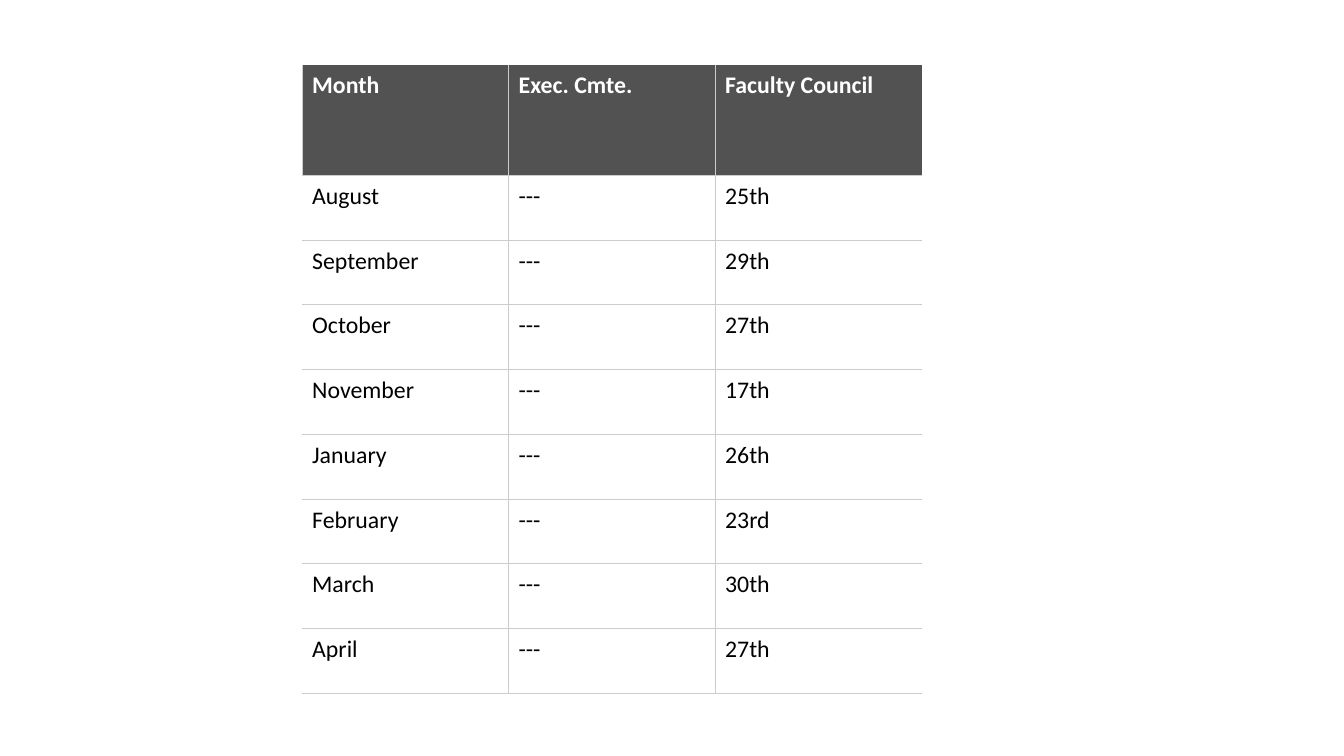
from lxml import etree
from pptx import Presentation
from pptx.dml.color import RGBColor
from pptx.oxml.ns import qn
from pptx.util import Pt

COLORS = {"header": "525252", "grid": "CCCCCC", "header_text": "FFFFFF", "text": "000000"}
FONT = "Calibri"
BLANK_LAYOUT = 6

HEADINGS = ("Month", "Exec. Cmte.", "Faculty Council")
COUNCIL_DATES = (
    ("August", "25th"),
    ("September", "29th"),
    ("October", "27th"),
    ("November", "17th"),
    ("January", "26th"),
    ("February", "23rd"),
    ("March", "30th"),
    ("April", "27th"),
)
NO_MEETING = "---"

TABLE_LEFT, TABLE_TOP = Pt(216), Pt(46.4)
COLUMN_WIDTH = Pt(147.5)
HEADER_HEIGHT, MONTH_HEIGHT = Pt(78.9), Pt(46.25)


def set_borders(cell, visible_sides):
    """Draw grid lines on the given sides (L, R, T, B) and clear the others."""
    properties = cell._tc.get_or_add_tcPr()
    for side in "LRTB":
        line = etree.SubElement(properties, qn(f"a:ln{side}"), w=str(Pt(0.75)))
        if side in visible_sides:
            fill = etree.SubElement(line, qn("a:solidFill"))
            etree.SubElement(fill, qn("a:srgbClr"), val=COLORS["grid"])
        else:
            etree.SubElement(line, qn("a:noFill"))


def fill_cell(cell, text, is_header):
    cell.margin_left = cell.margin_right = Pt(7)
    cell.margin_top = cell.margin_bottom = Pt(4.5)
    if is_header:
        cell.fill.solid()
        cell.fill.fore_color.rgb = RGBColor.from_string(COLORS["header"])
    else:
        cell.fill.background()
    cell.text_frame.text = text
    font = cell.text_frame.paragraphs[0].runs[0].font
    font.name, font.size, font.bold = FONT, Pt(17), is_header
    font.color.rgb = RGBColor.from_string(COLORS["header_text" if is_header else "text"])


def add_schedule(slide):
    schedule = [HEADINGS] + [(month, NO_MEETING, day) for month, day in COUNCIL_DATES]
    table = slide.shapes.add_table(
        len(schedule), len(HEADINGS), TABLE_LEFT, TABLE_TOP,
        COLUMN_WIDTH * len(HEADINGS),
        HEADER_HEIGHT + MONTH_HEIGHT * len(COUNCIL_DATES),
    ).table
    table.horz_banding = False
    for column in table.columns:
        column.width = COLUMN_WIDTH
    for row_index, entries in enumerate(schedule):
        is_header = row_index == 0
        table.rows[row_index].height = HEADER_HEIGHT if is_header else MONTH_HEIGHT
        for column_index, text in enumerate(entries):
            cell = table.cell(row_index, column_index)
            sides = "B" if is_header else "TB"
            if is_header or column_index > 0:
                sides += "L"
            if column_index < len(HEADINGS) - 1:
                sides += "R"
            set_borders(cell, sides)
            fill_cell(cell, text, is_header)


def main():
    presentation = Presentation()
    presentation.slide_width, presentation.slide_height = Pt(960), Pt(540)
    slide = presentation.slides.add_slide(presentation.slide_layouts[BLANK_LAYOUT])
    add_schedule(slide)
    presentation.save("out.pptx")


if __name__ == "__main__":
    main()
